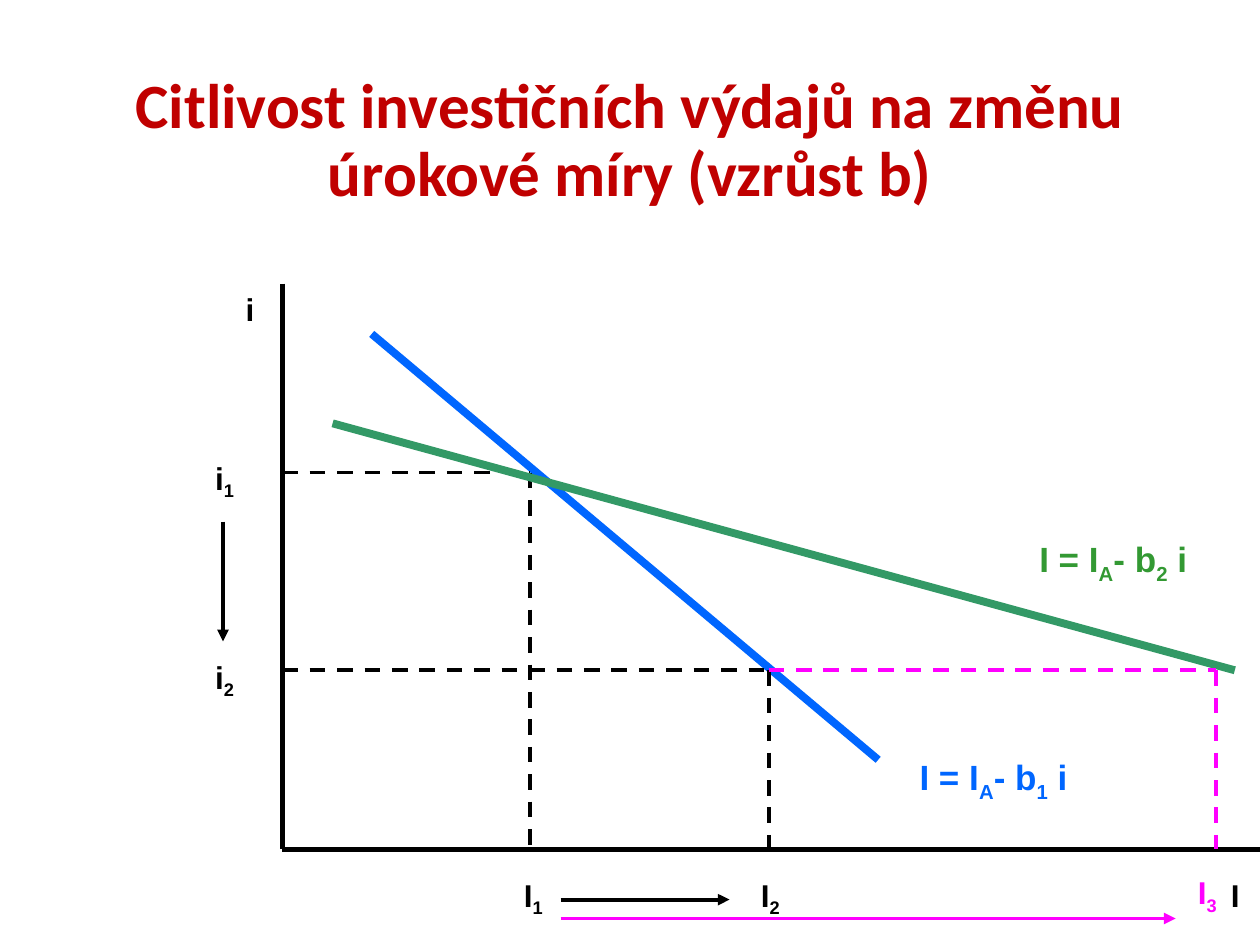
from lxml.etree import SubElement
from pptx import Presentation
from pptx.dml.color import RGBColor
from pptx.enum.dml import MSO_LINE
from pptx.enum.shapes import MSO_CONNECTOR
from pptx.enum.text import MSO_ANCHOR, PP_ALIGN
from pptx.oxml.ns import qn
from pptx.util import Inches, Pt

COLORS = {"title": "C00000", "axis": "000000", "steep": "0066FF", "flat": "339966",
          "flat_label": "339933", "third": "FF00FF"}
ORIGIN_X, BASE_Y = 2.24, 6.74
RATE_1, RATE_2 = 3.75, 5.32
INVEST_1, INVEST_2, INVEST_3 = 4.21, 6.1, 9.65


class Diagram:
    """Holds the style and the current slide, and draws each kind of element."""

    def __init__(self, slide):
        self.slide = slide

    def style(self, paragraph, font_name, size, color):
        font = paragraph.font
        font.name, font.size, font.bold = font_name, Pt(size), True
        font.color.rgb = RGBColor.from_string(COLORS[color])

    def title(self, text, left, top, width, height):
        heading = self.slide.shapes.title
        heading.left, heading.top = Inches(left), Inches(top)
        heading.width, heading.height = Inches(width), Inches(height)
        frame = heading.text_frame
        frame.text = text
        frame.word_wrap = True
        frame.vertical_anchor = MSO_ANCHOR.MIDDLE
        paragraph = frame.paragraphs[0]
        paragraph.alignment = PP_ALIGN.CENTER
        paragraph.line_spacing = 0.9
        self.style(paragraph, "Calibri", 36, "title")

    def line(self, start, end, color="axis", width=2.25, dashed=False, arrow=False):
        connector = self.slide.shapes.add_connector(
            MSO_CONNECTOR.STRAIGHT, *map(Inches, (*start, *end)))
        connector.line.color.rgb = RGBColor.from_string(COLORS[color])
        connector.line.width = Pt(width)
        if dashed:
            connector.line.dash_style = MSO_LINE.DASH
        if arrow:
            SubElement(connector.line._get_or_add_ln(), qn("a:tailEnd"), type="triangle")
        SubElement(connector._element.spPr, qn("a:effectLst"))

    def label(self, parts, left, top, width, height=0.4, size=18, color="axis"):
        """Writes the parts in turn as normal text and subscript."""
        box = self.slide.shapes.add_textbox(*map(Inches, (left, top, width, height)))
        box.text_frame.word_wrap = True
        paragraph = box.text_frame.paragraphs[0]
        self.style(paragraph, "Arial", size, color)
        for position, part in enumerate(parts):
            run = paragraph.add_run()
            run.text = part
            if position % 2:
                run.font._element.set("baseline", "-25000")

    def equation(self, index, left, top, color):
        self.label(("I = I", "A", "- b", index, " i"), left, top, 1.57, 0.43, 20, color)


def main():
    presentation = Presentation()
    presentation.slide_width, presentation.slide_height = Inches(10), Inches(7.5)
    diagram = Diagram(presentation.slides.add_slide(presentation.slide_layouts[5]))
    diagram.title("Citlivost investičních výdajů na změnu úrokové míry (vzrůst b)",
                  0.69, 0.4, 8.62, 1.45)

    diagram.line((ORIGIN_X, 2.25), (ORIGIN_X, BASE_Y), width=3)
    diagram.line((ORIGIN_X, BASE_Y), (8.23, BASE_Y), width=3)
    diagram.label(("I",), 9.67, 6.9, 0.35)
    diagram.label(("i",), 1.85, 2.25, 0.31)

    diagram.line((2.95, 2.65), (6.97, 6.03), "steep", 4.5)
    for rate, invest in ((RATE_1, INVEST_1), (RATE_2, INVEST_2)):
        diagram.line((ORIGIN_X, rate), (invest, rate), dashed=True)
        diagram.line((invest, rate), (invest, BASE_Y), dashed=True)
    for letter, index, left, top in (("i", "1", 1.61, 3.59), ("i", "2", 1.61, 5.17),
                                     ("I", "2", 5.94, 6.9), ("I", "1", 4.06, 6.9)):
        diagram.label((letter, index), left, top, 0.39)
    diagram.line((1.77, 4.14), (1.77, 5.09), arrow=True)
    diagram.line((4.45, 7.14), (5.79, 7.14), arrow=True)

    diagram.line((2.64, 3.36), (9.8, RATE_2), "flat", 4.5)
    diagram.equation("2", 8.15, 4.22, "flat_label")
    diagram.line((INVEST_2, RATE_2), (INVEST_3, RATE_2), "third", dashed=True)
    diagram.line((8.23, BASE_Y), (10, BASE_Y), width=3)
    diagram.line((INVEST_3, RATE_2), (INVEST_3, BASE_Y), "third", dashed=True)
    diagram.label(("I", "3"), 9.41, 6.88, 0.43, color="third")
    diagram.line((4.45, 7.29), (9.33, 7.29), "third", arrow=True)
    diagram.equation("1", 7.2, 5.95, "steep")

    presentation.save("out.pptx")


if __name__ == "__main__":
    main()
